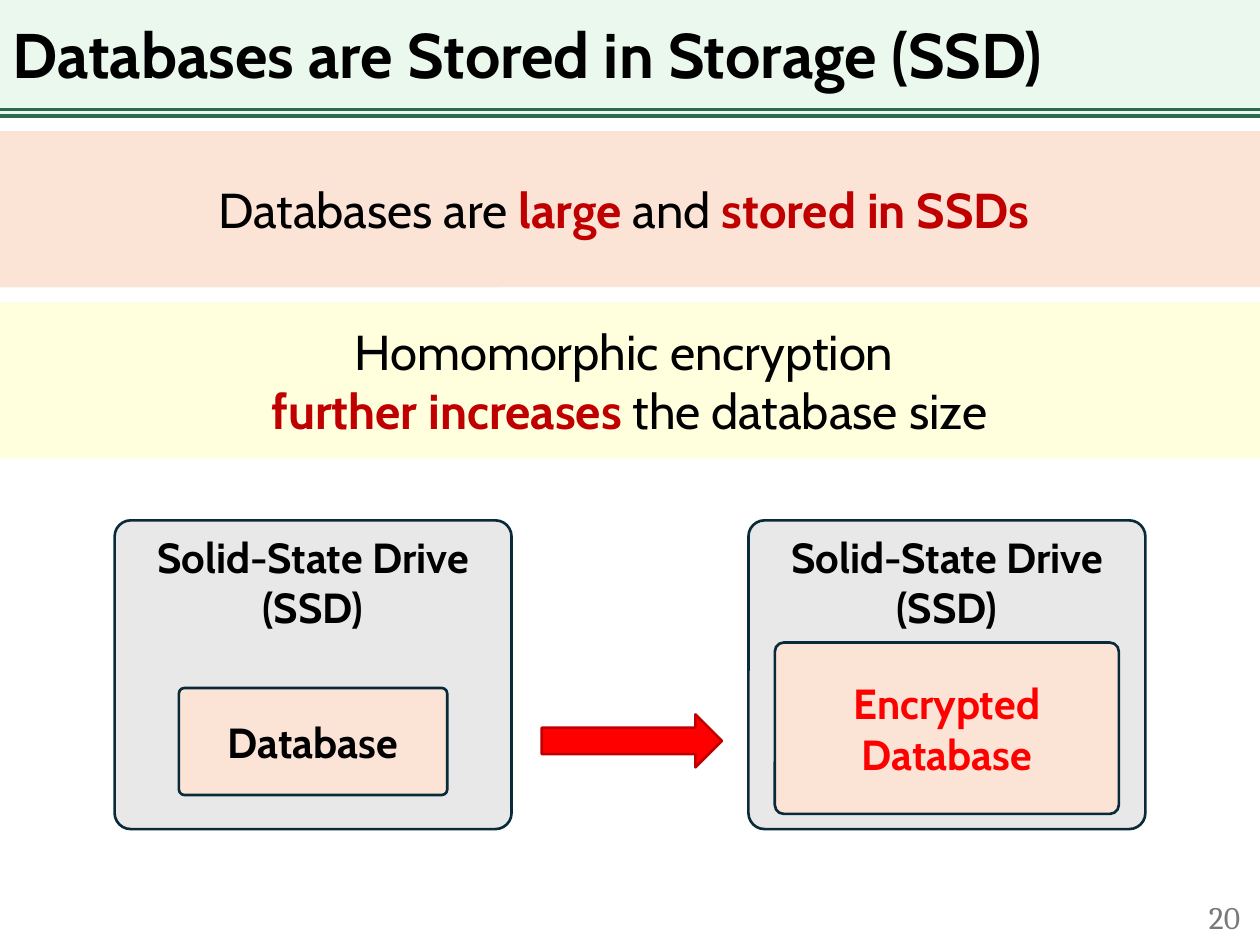
from lxml.etree import SubElement
from pptx import Presentation
from pptx.dml.color import RGBColor
from pptx.enum.shapes import MSO_CONNECTOR, MSO_SHAPE
from pptx.enum.text import MSO_ANCHOR, PP_ALIGN
from pptx.oxml.ns import qn
from pptx.util import Inches, Pt

COLORS = {
    "black": "000000", "green": "2D6A4F", "mint": "D8F3DD", "peach": "FBE3D6",
    "yellow": "FFFF00", "gray": "E8E8E8", "navy": "092A39", "red": "FF0000",
    "dark_red": "C00000", "page": "797979",
}
BODY_FONT = "Cabin"


def color(name):
    return RGBColor.from_string(COLORS[name])


def set_font(font, size, name="black", bold=None, face=BODY_FONT):
    font.name, font.size, font.bold = face, Pt(size), bold
    font.color.rgb = color(name)


def place(sp, box):
    sp.left, sp.top, sp.width, sp.height = (Inches(v) for v in box)


def add_box(s, kind, box, fill, line=None, alpha=None, corner=None):
    """Add a flat preset shape; alpha is the fill's opacity in percent."""
    sp = s.shapes.add_shape(kind, *(Inches(v) for v in box))
    sp.shadow.inherit = False
    sp.fill.solid()
    sp.fill.fore_color.rgb = color(fill)
    if alpha is not None:
        clr = sp.element.spPr.find(".//" + qn("a:srgbClr"))
        SubElement(clr, qn("a:alpha")).set("val", str(alpha * 1000))
    if line:
        sp.line.color.rgb = color(line)
        sp.line.width = Pt(1.5)
    else:
        sp.line.fill.background()
    if corner is not None:
        sp.adjustments[0] = corner
    return sp


def add_header(s, box, title):
    left, top, width, height = box
    add_box(s, MSO_SHAPE.RECTANGLE, box, "mint", alpha=50)
    for y in (top + height, top + height - 0.05):
        rule = s.shapes.add_connector(MSO_CONNECTOR.STRAIGHT, Inches(left), Inches(y),
                                      Inches(left + width), Inches(y))
        rule.line.color.rgb = color("green")
        rule.line.width = Pt(2)
        SubElement(rule.element.spPr, qn("a:effectLst"))

    sp = s.shapes.title
    sp.element.getparent().append(sp.element)  # bring in front of the band
    place(sp, (left, top, width + 0.08, height))
    tf = sp.text_frame
    tf.text = title
    tf.word_wrap = True
    tf.vertical_anchor = MSO_ANCHOR.MIDDLE
    p = tf.paragraphs[0]
    p.alignment = PP_ALIGN.LEFT
    p.line_spacing = 0.9
    set_font(p.font, 36, bold=True)


def add_band(s, box, fill, lines, alpha=None):
    """Add a full-width statement; each line is a list of (text, emphasised)."""
    sp = add_box(s, MSO_SHAPE.ROUNDED_RECTANGLE, box, fill, alpha=alpha, corner=0.056)
    tf = sp.text_frame
    tf.vertical_anchor = MSO_ANCHOR.MIDDLE
    for i, runs in enumerate(lines):
        p = tf.add_paragraph() if i else tf.paragraphs[0]
        p.alignment = PP_ALIGN.CENTER
        for text, strong in runs:
            r = p.add_run()
            r.text = text
            set_font(r.font, 28, "dark_red" if strong else "black", strong)


def add_label_box(s, box, fill, text, anchor, text_color="black"):
    sp = add_box(s, MSO_SHAPE.ROUNDED_RECTANGLE, box, fill, "navy", corner=0.052)
    tf = sp.text_frame
    tf.text = text
    tf.vertical_anchor = anchor
    for p in tf.paragraphs:
        p.alignment = PP_ALIGN.CENTER
        set_font(p.font, 24, text_color, True)


def add_drive(s, box, content, size, bottom_gap, text_color="black"):
    """Add an SSD with a content box of the given size centred across it."""
    left, top, width, height = box
    w, h = size
    add_label_box(s, box, "gray", "Solid-State Drive (SSD)", MSO_ANCHOR.TOP)
    inner = (left + (width - w) / 2, top + height - bottom_gap - h, w, h)
    add_label_box(s, inner, "peach", content, MSO_ANCHOR.MIDDLE, text_color)


def add_page_number(s, box, number):
    sp = s.shapes.add_textbox(*(Inches(v) for v in box))
    tf = sp.text_frame
    tf.word_wrap = True
    tf.vertical_anchor = MSO_ANCHOR.MIDDLE
    tf.text = str(number)
    p = tf.paragraphs[0]
    p.alignment = PP_ALIGN.RIGHT
    set_font(p.font, 18, "page", face="Cambria")


def main():
    prs = Presentation()
    prs.slide_width, prs.slide_height = Inches(10), Inches(7.5)
    s = prs.slides.add_slide(prs.slide_layouts[5])

    add_header(s, (0, 0, 10, 0.92), "Databases are Stored in Storage (SSD)")
    add_band(s, (-0.14, 1.04, 10.27, 1.24), "peach",
             [[("Databases are ", False), ("large", True), (" and ", False),
               ("stored in SSDs ", True)]])
    add_band(s, (-0.14, 2.4, 10.27, 1.24), "yellow",
             [[("Homomorphic encryption ", False)],
              [("further increases ", True), ("the database size", False)]], alpha=13)
    add_drive(s, (0.91, 4.13, 3.15, 2.45), "Database", (2.13, 0.85), 0.27)
    add_drive(s, (5.94, 4.13, 3.15, 2.45), "Encrypted\nDatabase", (2.73, 1.36), 0.12, "red")
    add_box(s, MSO_SHAPE.RIGHT_ARROW, (4.3, 5.67, 1.43, 0.42), "red", "dark_red")
    add_page_number(s, (7.69, 7.08, 2.25, 0.4), 20)
    prs.save("out.pptx")


if __name__ == "__main__":
    main()
